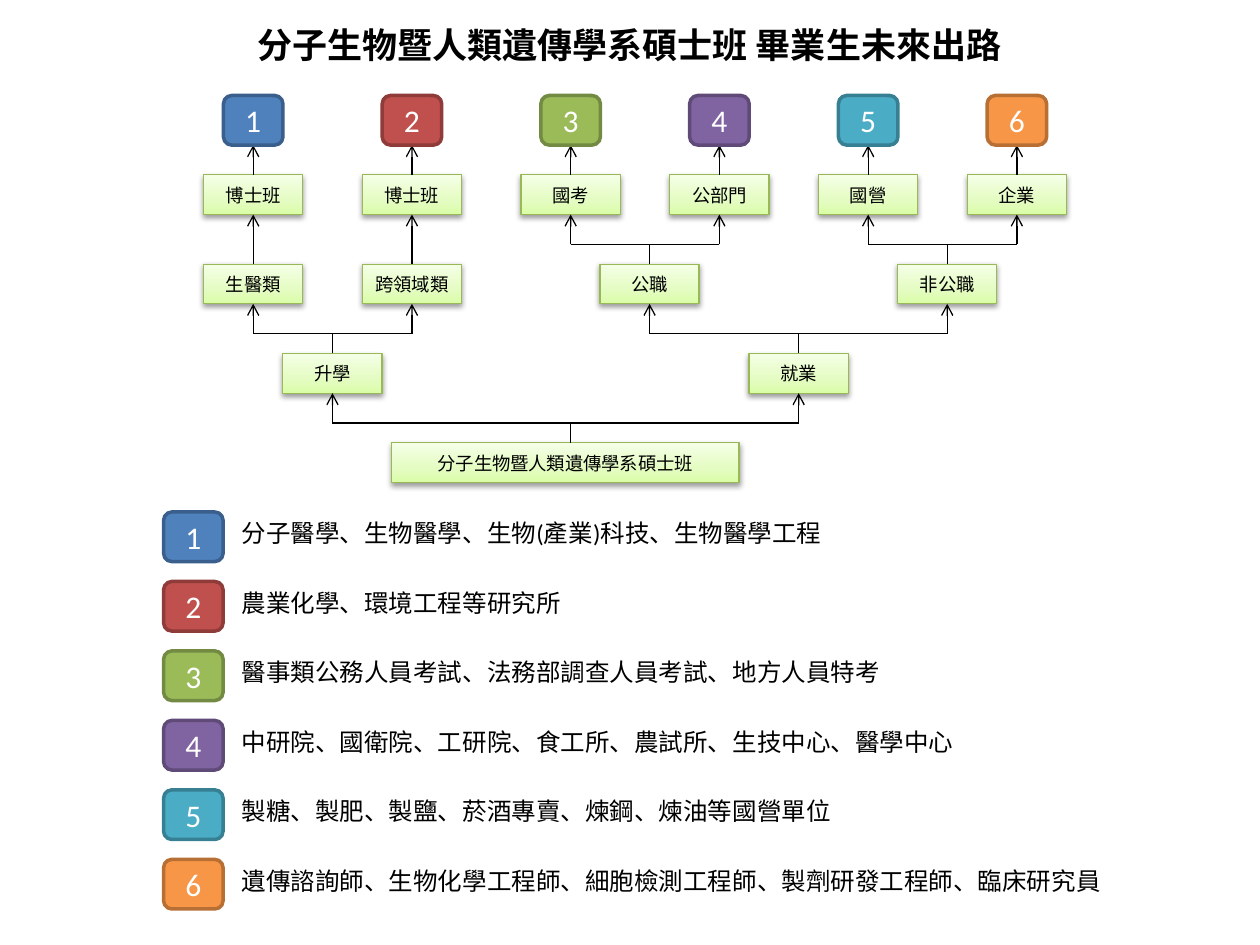
from lxml import etree
from pptx import Presentation
from pptx.dml.color import RGBColor
from pptx.enum.shapes import MSO_CONNECTOR, MSO_SHAPE
from pptx.enum.text import MSO_ANCHOR, MSO_AUTO_SIZE, PP_ALIGN
from pptx.oxml import parse_xml
from pptx.oxml.ns import nsdecls, qn
from pptx.util import Pt

STRAIGHT = MSO_CONNECTOR.STRAIGHT
RECT, ROUNDED = MSO_SHAPE.RECTANGLE, MSO_SHAPE.ROUNDED_RECTANGLE
MIDDLE, TOP = MSO_ANCHOR.MIDDLE, MSO_ANCHOR.TOP
GROW, FIXED = MSO_AUTO_SIZE.SHAPE_TO_FIT_TEXT, MSO_AUTO_SIZE.NONE
CENTER, LEFT = PP_ALIGN.CENTER, PP_ALIGN.LEFT

BLACK = RGBColor(0x00, 0x00, 0x00)
WHITE = RGBColor(0xFF, 0xFF, 0xFF)
NODE_EDGE = RGBColor(0x98, 0xB9, 0x55)
BADGE_COLOURS = [
    (RGBColor(0x4F, 0x81, 0xBD), RGBColor(0x3A, 0x5F, 0x8C)),
    (RGBColor(0xC0, 0x50, 0x4D), RGBColor(0x8E, 0x3B, 0x39)),
    (RGBColor(0x9B, 0xBB, 0x59), RGBColor(0x73, 0x8A, 0x42)),
    (RGBColor(0x80, 0x64, 0xA2), RGBColor(0x5F, 0x4A, 0x78)),
    (RGBColor(0x4B, 0xAC, 0xC6), RGBColor(0x37, 0x7F, 0x92)),
    (RGBColor(0xF7, 0x96, 0x46), RGBColor(0xB7, 0x6F, 0x34)),
]
NODE_GRADIENT = f"""<a:gradFill {nsdecls('a')} rotWithShape="1"><a:gsLst>
<a:gs pos="0"><a:srgbClr val="DAFDA7"/></a:gs>
<a:gs pos="35000"><a:srgbClr val="E4FCC2"/></a:gs>
<a:gs pos="100000"><a:srgbClr val="F5FFE7"/></a:gs>
</a:gsLst><a:lin ang="16200000" scaled="1"/></a:gradFill>"""
NODE_SHADOW = f"""<a:outerShdw {nsdecls('a')} blurRad="40000" dist="20000" dir="5400000"
rotWithShape="0"><a:srgbClr val="000000"><a:alpha val="38000"/></a:srgbClr></a:outerShdw>"""

TITLE_FONT = {"size": Pt(20), "name": "Noto Sans CJK SC", "bold": True}
NODE_FONT = {"size": Pt(10.5), "name": "Calibri"}
BADGE_FONT = {"size": Pt(18), "name": "Calibri"}
LEGEND_FONT = {"size": Pt(14), "name": "Calibri"}

NODE_W, NODE_H, ROOT_W = 56.7, 22.7, 198.5
LEVEL_TOP, LEVEL_STEP, BUS_GAP = 99.9, 51.05, 17
BADGE_W, BADGE_H, BADGE_TOP = 34, 28.35, 54.6
LEGEND_LEFT, LEGEND_TOP, LEGEND_STEP = 93.5, 292.6, 39.7

presentation = Presentation()
presentation.slide_width, presentation.slide_height = Pt(720), Pt(540)
slide = presentation.slides.add_slide(presentation.slide_layouts[5])
shapes = slide.shapes


def write(holder, text, font_format, colour, align=CENTER, anchor=MIDDLE, auto_size=FIXED):
    frame = holder.text_frame
    frame.text = text
    frame.word_wrap, frame.vertical_anchor, frame.auto_size = True, anchor, auto_size
    frame.paragraphs[0].alignment = align
    font = frame.paragraphs[0].runs[0].font
    for attribute, value in font_format.items():
        setattr(font, attribute, value)
    font.color.rgb = colour


def connect(x1, y1, x2, y2, arrow=False, weight=0.75):
    link = shapes.add_connector(STRAIGHT, Pt(x1), Pt(y1), Pt(x2), Pt(y2))
    link.line.color.rgb, link.line.width = BLACK, Pt(weight)
    if arrow:
        etree.SubElement(link.line._ln, qn("a:tailEnd"), type="arrow")
    etree.SubElement(link._element.spPr, qn("a:effectLst"))


title = shapes.title
title.left, title.top, title.width, title.height = Pt(121.7), Pt(9.4), Pt(476), Pt(31.5)
write(title, "分子生物暨人類遺傳學系碩士班 畢業生未來出路", TITLE_FONT, BLACK)
title_run = title.text_frame.paragraphs[0].runs[0]
etree.SubElement(title_run.font._element, qn("a:ea"), typeface="Noto Sans CJK SC")

outcome_centres = [144.7, 235.4, 326.1, 411.1, 496.1, 581.1]
levels = [
    list(zip(outcome_centres, ["博士班", "博士班", "國考", "公部門", "國營", "企業"])),
    [(144.7, "生醫類"), (235.4, "跨領域類"), (371.2, "公職"), (541.3, "非公職")],
    [(190, "升學"), (456.4, "就業")],
    [(323.1, "分子生物暨人類遺傳學系碩士班")],
]
for level, nodes in enumerate(levels):
    node_width = ROOT_W if level == 3 else NODE_W
    for centre, label in nodes:
        node = shapes.add_shape(RECT, Pt(centre - node_width / 2), Pt(LEVEL_TOP + level * LEVEL_STEP),
                                Pt(node_width), Pt(NODE_H))
        node.line.color.rgb, node.line.width = NODE_EDGE, Pt(0.75)
        node._element.spPr.insert(2, parse_xml(NODE_GRADIENT))
        node.shadow.inherit = False
        node._element.spPr.find(qn("a:effectLst")).append(parse_xml(NODE_SHADOW))
        write(node, label, NODE_FONT, BLACK)

branches = [
    (0, 144.7, [144.7]), (0, 235.4, [235.4]),
    (0, 371.2, [326.1, 411.1]), (0, 541.3, [496.1, 581.1]),
    (1, 190, [144.7, 235.4]), (1, 456.4, [371.2, 541.3]),
    (2, 326.1, [190, 456.4]),
]
for level, stem, children in branches:
    child_bottom = LEVEL_TOP + level * LEVEL_STEP + NODE_H
    parent_top = LEVEL_TOP + (level + 1) * LEVEL_STEP
    arrow_start = parent_top
    if len(children) > 1:
        arrow_start = child_bottom + BUS_GAP
        connect(children[0], arrow_start, children[-1], arrow_start, weight=1 if level == 2 else 0.75)
        connect(stem, arrow_start, stem, parent_top)
    for child in children:
        connect(child, arrow_start, child, child_bottom, arrow=True)
for centre in outcome_centres:
    connect(centre, LEVEL_TOP, centre, BADGE_TOP + BADGE_H, arrow=True)

legend = [
    ("分子醫學、生物醫學、生物(產業)科技、生物醫學工程", 348.5),
    ("農業化學、環境工程等研究所", 198),
    ("醫事類公務人員考試、法務部調查人員考試、地方人員特考", 382.3),
    ("中研院、國衛院、工研院、食工所、農試所、生技中心、醫學中心", 424.8),
    ("製糖、製肥、製鹽、菸酒專賣、煉鋼、煉油等國營單位", 353.5),
    ("遺傳諮詢師、生物化學工程師、細胞檢測工程師、製劑研發工程師、臨床研究員", 509),
]
for index, (description, width) in enumerate(legend):
    row_top = LEGEND_TOP + index * LEGEND_STEP
    fill_colour, edge_colour = BADGE_COLOURS[index]
    for left, top in [(outcome_centres[index] - BADGE_W / 2, BADGE_TOP), (LEGEND_LEFT, row_top)]:
        badge = shapes.add_shape(ROUNDED, Pt(left), Pt(top), Pt(BADGE_W), Pt(BADGE_H))
        badge.fill.solid()
        badge.fill.fore_color.rgb = fill_colour
        badge.line.color.rgb, badge.line.width = edge_colour, Pt(2)
        badge.shadow.inherit = False
        write(badge, str(index + 1), BADGE_FONT, WHITE)
    entry = shapes.add_textbox(Pt(131), Pt(row_top), Pt(width), Pt(24.2))
    write(entry, description, LEGEND_FONT, BLACK, LEFT, TOP, GROW)

presentation.save("out.pptx")
